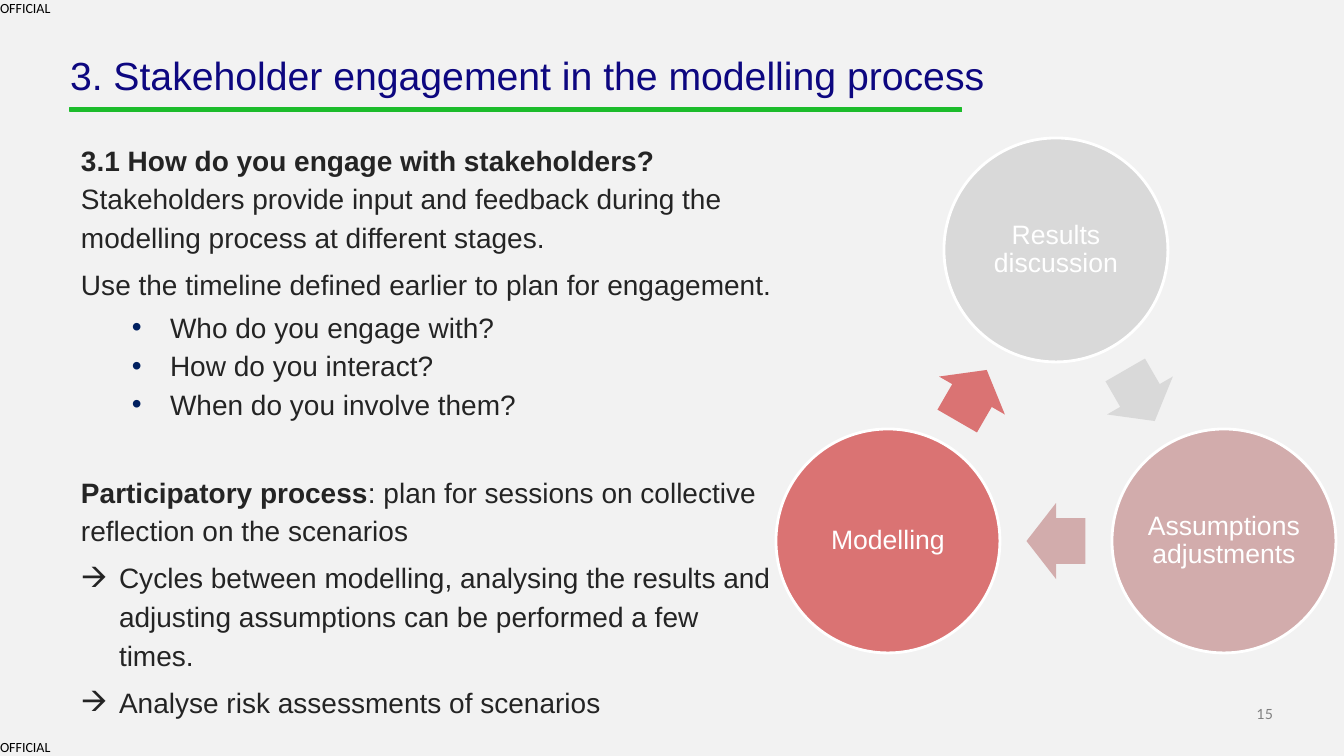
from math import cos, radians, sin

from lxml.etree import SubElement
from pptx import Presentation
from pptx.dml.color import RGBColor
from pptx.enum.shapes import MSO_SHAPE
from pptx.enum.text import MSO_ANCHOR, MSO_AUTO_SIZE, PP_ALIGN
from pptx.oxml.ns import qn
from pptx.util import Emu, Pt

BACKGROUND = RGBColor(0xF2, 0xF2, 0xF2)
NAVY = RGBColor(0x0D, 0x07, 0x80)
GREEN = RGBColor(0x1C, 0xBC, 0x2B)
INK = RGBColor(0x24, 0x24, 0x24)
BULLET_BLUE = RGBColor(0x00, 0x20, 0x60)
GREY = RGBColor(0x7F, 0x7F, 0x7F)
BLACK = RGBColor(0x00, 0x00, 0x00)
WHITE = RGBColor(0xFF, 0xFF, 0xFF)
SILVER = RGBColor(0xD9, 0xD9, 0xD9)
ROSE = RGBColor(0xD2, 0xAC, 0xAC)
RED = RGBColor(0xDA, 0x73, 0x73)

# Content
TITLE = "3. Stakeholder engagement in the modelling process"

# Paragraph styles: left margin, first-line indent (px), bullet, bullet colour
PLAIN = (11, 0, None, None)
QUESTION = (100, -38, "•", BULLET_BLUE)
ARROW = (49, -38, "🡪", INK)

# Style, space before (pt), bold lead, text
BODY = [
    (PLAIN, 6, "3.1 How do you engage with stakeholders?\n",
     "Stakeholders provide input and feedback during the modelling process "
     "at different stages."),
    (PLAIN, 6, "", "Use the timeline defined earlier to plan for engagement."),
    (QUESTION, 3, "", "Who do you engage with?"),
    (QUESTION, 0, "", "How do you interact?"),
    (QUESTION, 0, "", "When do you involve them?"),
    (PLAIN, 35, "Participatory process",
     ": plan for sessions on collective reflection on the scenarios"),
    (ARROW, 6, "", "Cycles between modelling, analysing the results and "
                   "adjusting assumptions can be performed a few times."),
    (ARROW, 6, "", "Analyse risk assessments of scenarios"),
]

# Clockwise from the top
CYCLE = [
    ("Results discussion", SILVER),
    ("Assumptions adjustments", ROSE),
    ("Modelling", RED),
]
CYCLE_CENTRE = (1056, 444)
CYCLE_RADIUS = 194
CIRCLE_SIZE = 224
ARROW_LENGTH, ARROW_WIDTH = 59, 76

# Text, left, top, width, alignment, font, colour
LABELS = [
    ("OFFICIAL", 0, 0, 54, PP_ALIGN.LEFT, "Calibri", BLACK),
    ("OFFICIAL", 0, 739, 54, PP_ALIGN.LEFT, "Calibri", BLACK),
    ("15", 1231, 706, 42, PP_ALIGN.RIGHT, "Lato", GREY),
]


def px(length):
    return Emu(round(length * 914400 / 100.8))


def place(shape, left, top, width, height):
    shape.left, shape.top = px(left), px(top)
    shape.width, shape.height = px(width), px(height)


def prepare_frame(shape, anchor=MSO_ANCHOR.TOP, inset=0):
    frame = shape.text_frame
    frame.word_wrap = True
    frame.auto_size = MSO_AUTO_SIZE.NONE
    frame.vertical_anchor = anchor
    frame.margin_left = frame.margin_right = px(inset)
    frame.margin_top = frame.margin_bottom = px(inset)
    return frame


def write(paragraph, text, size=20, font="Arial", color=INK, bold=False,
          align=PP_ALIGN.LEFT, line_spacing=1.0, before=0):
    paragraph.alignment = align
    paragraph.line_spacing = line_spacing
    paragraph.space_before = Pt(before)
    paragraph.space_after = Pt(0)
    for index, line in enumerate(text.split("\n")):
        if index:
            paragraph.add_line_break()
        if line:
            run = paragraph.add_run()
            run.text = line
            run.font.size, run.font.name = Pt(size), font
            run.font.bold = bold
            run.font.color.rgb = color


def set_bullet(paragraph, margin, indent, bullet, color):
    properties = paragraph._p.get_or_add_pPr()
    properties.set("marL", str(px(margin)))
    properties.set("indent", str(px(indent)))
    if bullet is None:
        SubElement(properties, qn("a:buNone"))
        return
    bullet_color = SubElement(properties, qn("a:buClr"))
    SubElement(bullet_color, qn("a:srgbClr"), val=str(color))
    SubElement(properties, qn("a:buFont"), typeface="Arial")
    SubElement(properties, qn("a:buChar"), char=bullet)


def add_filled(slide, kind, left, top, width, height, fill, line=None, weight=0):
    shape = slide.shapes.add_shape(kind, px(left), px(top), px(width), px(height))
    shape.shadow.inherit = False
    shape.fill.solid()
    shape.fill.fore_color.rgb = fill
    if line is None:
        shape.line.fill.background()
    else:
        shape.line.color.rgb = line
        shape.line.width = Pt(weight)
    return shape


def cycle_point(angle, radius):
    x, y = CYCLE_CENTRE
    return x + radius * cos(radians(angle)), y + radius * sin(radians(angle))


def add_cycle(slide):
    step = 360 / len(CYCLE)
    arrow_radius = CYCLE_RADIUS * cos(radians(step / 2))
    for index, (label, color) in enumerate(CYCLE):
        angle = index * step - 90
        x, y = cycle_point(angle, CYCLE_RADIUS)
        circle = add_filled(slide, MSO_SHAPE.OVAL, x - CIRCLE_SIZE / 2,
                            y - CIRCLE_SIZE / 2, CIRCLE_SIZE, CIRCLE_SIZE,
                            color, WHITE, 2)
        frame = prepare_frame(circle, MSO_ANCHOR.MIDDLE, 3)
        write(frame.paragraphs[0], label, size=19, color=WHITE,
              align=PP_ALIGN.CENTER, line_spacing=0.9)

        # Arrow halfway to the next circle
        x, y = cycle_point(angle + step / 2, arrow_radius)
        arrow = add_filled(slide, MSO_SHAPE.RIGHT_ARROW, x - ARROW_LENGTH / 2,
                           y - ARROW_WIDTH / 2, ARROW_LENGTH, ARROW_WIDTH, color)
        arrow.adjustments[0], arrow.adjustments[1] = 0.6, 0.5
        arrow.rotation = angle + step / 2 + 90


def main():
    presentation = Presentation()
    presentation.slide_width, presentation.slide_height = px(1344), px(756)
    slide = presentation.slides.add_slide(presentation.slide_layouts[1])
    slide.background.fill.solid()
    slide.background.fill.fore_color.rgb = BACKGROUND

    # Page labels and title rule
    for text, left, top, width, align, font, color in LABELS:
        box = slide.shapes.add_textbox(px(left), px(top), px(width), px(17))
        write(prepare_frame(box).paragraphs[0], text, size=10, font=font,
              color=color, align=align)
    add_filled(slide, MSO_SHAPE.RECTANGLE, 70, 108, 892, 4, GREEN, GREEN, 0.75)

    # Title
    title = slide.shapes.title
    place(title, 70, 57, 923, 86)
    write(prepare_frame(title).paragraphs[0], TITLE, size=28, color=NAVY,
          line_spacing=0.9)

    # Body
    body = slide.placeholders[1]
    place(body, 70, 138, 704, 542)
    frame = prepare_frame(body)
    for index, (style, before, lead, text) in enumerate(BODY):
        paragraph = frame.add_paragraph() if index else frame.paragraphs[0]
        for part, bold in ((lead, True), (text, False)):
            write(paragraph, part, bold=bold, line_spacing=1.15, before=before)
        set_bullet(paragraph, *style)

    add_cycle(slide)
    presentation.save("out.pptx")


if __name__ == "__main__":
    main()
